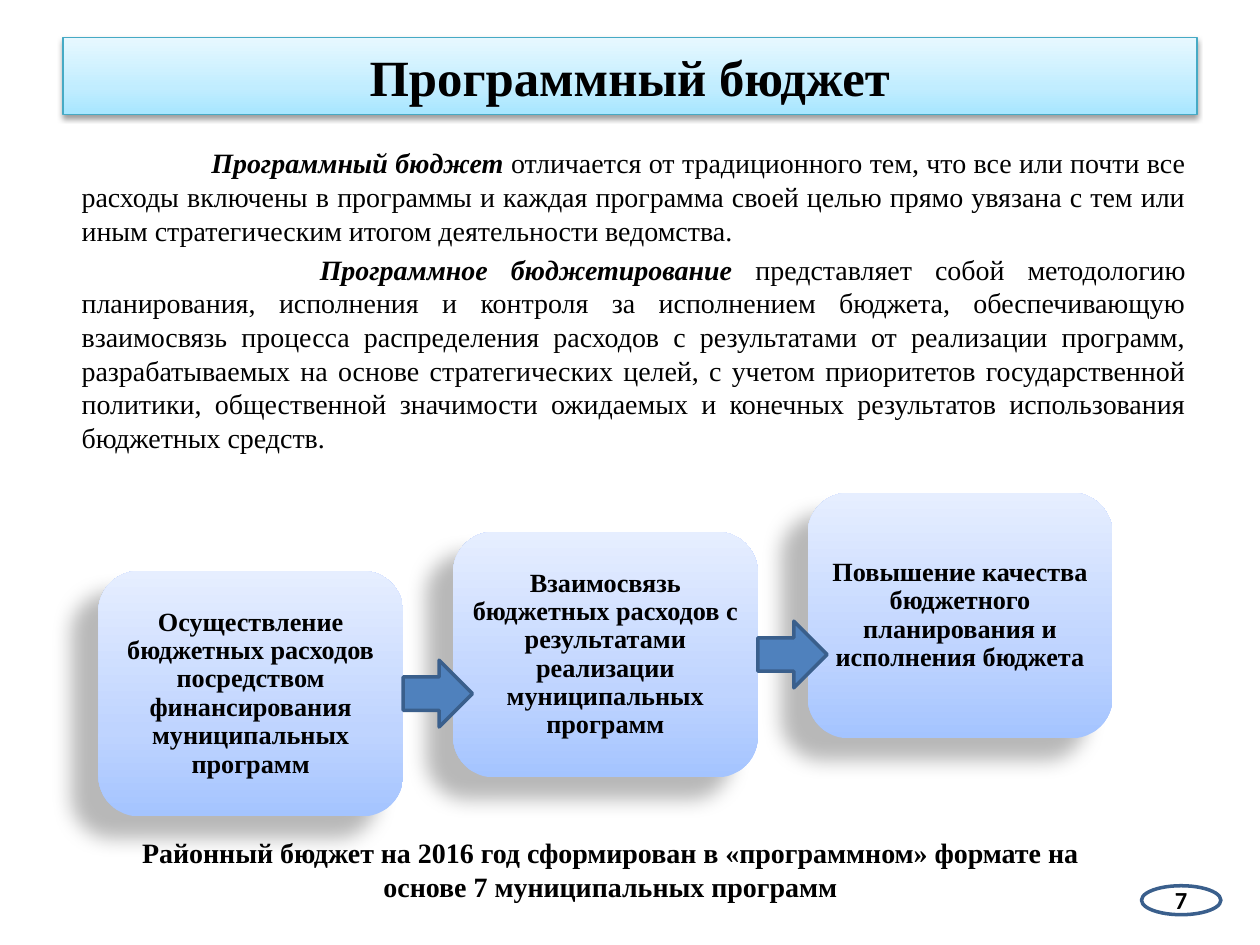
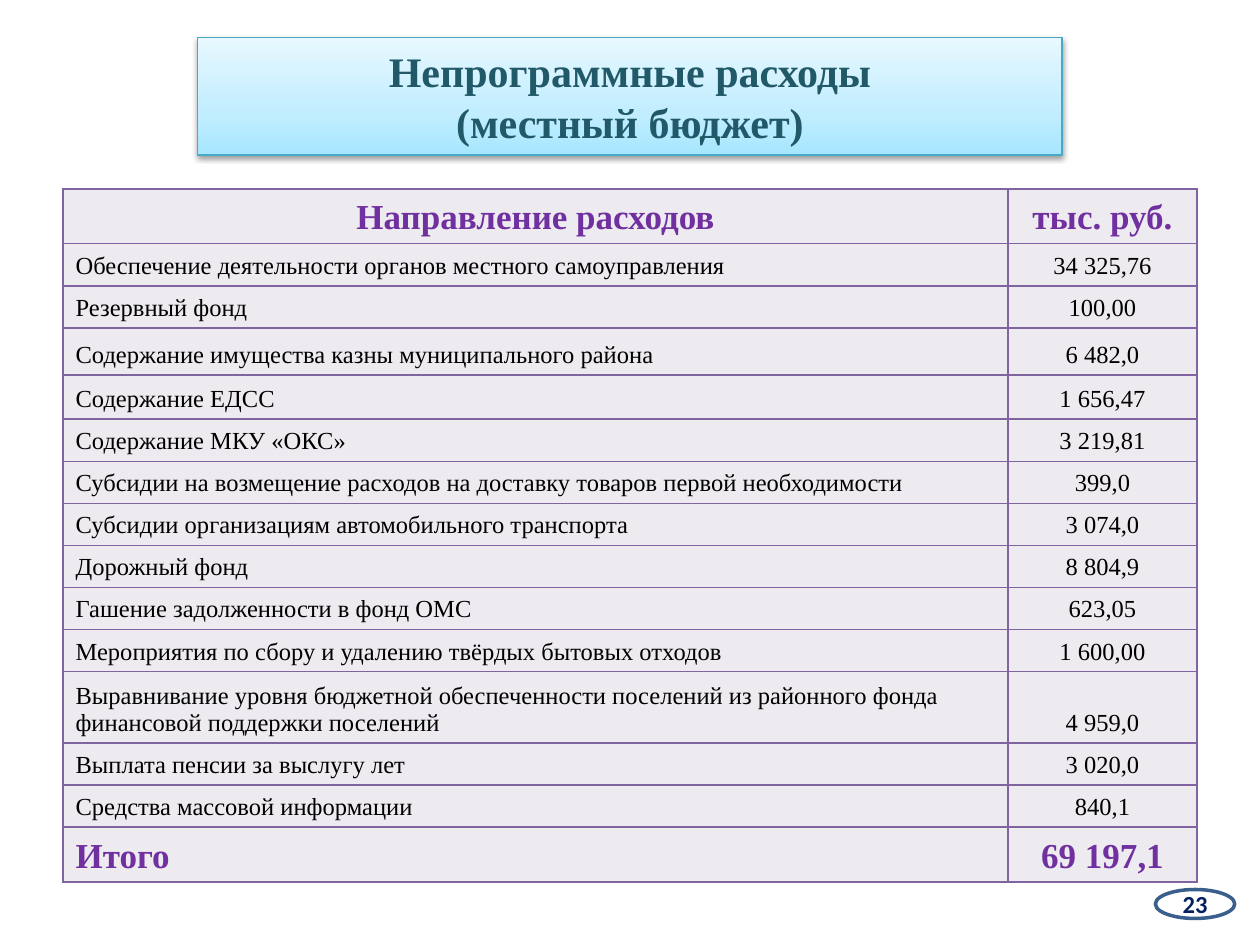
"""Builds two budget slides: the programme budget and the non-programme expenses."""
from typing import NamedTuple, Optional

from lxml.etree import SubElement
from pptx import Presentation
from pptx.dml.color import RGBColor
from pptx.enum.shapes import MSO_SHAPE
from pptx.enum.text import MSO_ANCHOR, PP_ALIGN
from pptx.oxml.ns import qn
from pptx.util import Inches, Pt

COLUMNS, ROWS = 100, 75
SLIDE_WIDTH, SLIDE_HEIGHT = Inches(10), Inches(7.5)
SERIF, SANS = "Times New Roman", "Calibri"
BLACK, WHITE, TEAL, NAVY, PURPLE = "000000", "FFFFFF", "215968", "002060", "7030A0"
EDGE_BLUE, ARROW_BLUE, TITLE_EDGE = "3A5F8C", "4F81BD", "46AAC5"
CELL_FILL, CELL_EDGE = "EDEAF0", "8064A2"
TITLE_GRADIENT = {0: "A7E6FF", 35: "C1EDFF", 100: "E7F8FF"}
CARD_GRADIENT = {0: "A4C4FF", 35: "BFD4FF", 100: "E6EEFF"}


class Area(NamedTuple):
    """A rectangle in grid columns and rows."""
    left: float
    top: float
    width: float
    height: float


class TextStyle(NamedTuple):
    """Font and alignment of a paragraph."""
    size: float
    color: str = BLACK
    bold: bool = True
    font: str = SERIF
    align: PP_ALIGN = PP_ALIGN.CENTER


class Shadow(NamedTuple):
    """An outer shadow: opacity in percent, lengths in points, angle in degrees."""
    opacity: int
    blur: float
    distance: float
    angle: int


class Definition(NamedTuple):
    """A term, its explanation and the first-line indent in columns."""
    term: str
    explanation: str
    indent: float


class Expense(NamedTuple):
    """A table row with its height in grid rows."""
    purpose: str
    amount: str
    height: float


TITLE_SHADOW = Shadow(38, 3.1, 1.6, 90)
CARD_SHADOW = Shadow(28, 11.8, 19.7, 141)
CARD_STYLE = TextStyle(15)
CAPTION_STYLE = TextStyle(16)
BODY_STYLE = TextStyle(16, bold=False, align=PP_ALIGN.JUSTIFY)
BODY_MARGIN = 3.8
FIRST_CARD = Area(7.8, 45.3, 24.2, 19.5)
CARD_STEP, CARD_RISE = 28.15, 3.1
FIRST_ARROW = Area(32, 52.4, 5.5, 5.3)

DEFINITIONS = [
    Definition("Программный бюджет ", "отличается от традиционного тем, что все или почти все расходы "
               "включены в программы и каждая программа своей целью прямо увязана с тем или иным "
               "стратегическим итогом деятельности ведомства.", 10.3),
    Definition("Программное бюджетирование ", "представляет собой методологию планирования, исполнения "
               "и контроля за исполнением бюджета, обеспечивающую взаимосвязь процесса распределения "
               "расходов с результатами от реализации программ, разрабатываемых на основе стратегических "
               "целей, с учетом приоритетов государственной политики, общественной значимости ожидаемых "
               "и конечных результатов использования бюджетных средств.", 18.9),
]
STAGES = [
    "Осуществление бюджетных расходов посредством финансирования муниципальных программ",
    "Взаимосвязь бюджетных расходов с результатами реализации муниципальных программ",
    "Повышение качества бюджетного планирования и исполнения бюджета",
]
CAPTION = "Районный бюджет на 2016 год сформирован в «программном» формате на основе 7 муниципальных программ"
EXPENSES = [
    Expense("Направление расходов", "тыс. руб.", 4.1),
    Expense("Обеспечение деятельности органов местного самоуправления", "34 325,76", 3.35),
    Expense("Резервный фонд", "100,00", 3.3),
    Expense("Содержание имущества казны муниципального района", "6 482,0", 3.75),
    Expense("Содержание ЕДСС", "1 656,47", 3.5),
    Expense("Содержание МКУ «ОКС»", "3 219,81", 3.15),
    Expense("Субсидии на возмещение расходов на доставку товаров первой необходимости", "399,0", 3.15),
    Expense("Субсидии организациям автомобильного транспорта", "3 074,0", 3.15),
    Expense("Дорожный фонд", "8 804,9", 3.3),
    Expense("Гашение задолженности в фонд ОМС", "623,05", 3.3),
    Expense("Мероприятия по сбору и удалению твёрдых бытовых отходов", "1 600,00", 3.3),
    Expense("Выравнивание уровня бюджетной обеспеченности поселений из районного фонда "
            "финансовой поддержки поселений", "4 959,0", 5.3),
    Expense("Выплата пенсии за выслугу лет", "3 020,0", 3.3),
    Expense("Средства массовой информации", "840,1", 3.3),
    Expense("Итого", "69 197,1", 4.1),
]


def across(columns: float) -> int:
    """Convert grid columns to a length."""
    return int(SLIDE_WIDTH * columns / COLUMNS)


def down(rows: float) -> int:
    """Convert grid rows to a length."""
    return int(SLIDE_HEIGHT * rows / ROWS)


def place(area: Area) -> tuple[int, int, int, int]:
    """Convert an area to left, top, width and height."""
    return across(area.left), down(area.top), across(area.width), down(area.height)


def rgb(color: str) -> RGBColor:
    """Convert a hex string to a colour."""
    return RGBColor.from_string(color)


def style_paragraph(paragraph, style: TextStyle) -> None:
    """Apply a text style to a paragraph."""
    paragraph.alignment = style.align
    font = paragraph.font
    font.name, font.size, font.bold = style.font, Pt(style.size), style.bold
    font.color.rgb = rgb(style.color)


def write(frame, text: str, style: TextStyle) -> None:
    """Put one styled paragraph into a text frame."""
    frame.word_wrap = True
    frame.vertical_anchor = MSO_ANCHOR.MIDDLE
    frame.paragraphs[0].text = text
    style_paragraph(frame.paragraphs[0], style)


def add_plain(page, kind: MSO_SHAPE, area: Area, fill: Optional[str] = None,
              edge: Optional[str] = None, edge_width: float = 2):
    """Add a preset shape without shadow."""
    shape = page.shapes.add_shape(kind, *place(area))
    shape.shadow.inherit = False
    if fill:
        shape.fill.solid()
        shape.fill.fore_color.rgb = rgb(fill)
    if edge:
        shape.line.color.rgb = rgb(edge)
        shape.line.width = Pt(edge_width)
    else:
        shape.line.fill.background()
    return shape


def add_glossy(page, kind: MSO_SHAPE, area: Area, gradient: dict[int, str],
               shadow: Shadow, edge: Optional[str] = None):
    """Add a shape with an upward gradient and an outer shadow."""
    shape = add_plain(page, kind, area, edge=edge, edge_width=0.75)
    shape.fill.gradient()
    shape.fill.gradient_angle = 90
    properties = shape.element.spPr
    stops = properties.find(".//" + qn("a:gsLst"))
    stops.clear()
    for position, color in gradient.items():
        stop = SubElement(stops, qn("a:gs"), pos=str(position * 1000))
        SubElement(stop, qn("a:srgbClr"), val=color)
    outer = SubElement(properties.find(qn("a:effectLst")), qn("a:outerShdw"),
                       blurRad=str(Pt(shadow.blur)), dist=str(Pt(shadow.distance)),
                       dir=str(shadow.angle * 60000), algn="ctr", rotWithShape="0")
    tint = SubElement(outer, qn("a:srgbClr"), val=BLACK)
    SubElement(tint, qn("a:alpha"), val=str(shadow.opacity * 1000))
    return shape


def add_title(page, text: str, area: Area, style: TextStyle) -> None:
    """Add the title band."""
    band = add_glossy(page, MSO_SHAPE.RECTANGLE, area, TITLE_GRADIENT, TITLE_SHADOW, TITLE_EDGE)
    write(band.text_frame, text, style)


def add_page_number(page, number: str, left: float, top: float, color: str) -> None:
    """Add the oval page number."""
    oval = add_plain(page, MSO_SHAPE.OVAL, Area(left, top, 6.3, 2.3), WHITE, EDGE_BLUE)
    write(oval.text_frame, number, TextStyle(14, color, font=SANS))
    oval.text_frame.word_wrap = False


def add_definitions(page) -> None:
    """Add the justified definitions."""
    frame = page.shapes.add_textbox(*place(Area(1.7, 11.1, 93.4, 26))).text_frame
    frame.word_wrap = True
    for index, definition in enumerate(DEFINITIONS):
        paragraph = frame.paragraphs[0] if index == 0 else frame.add_paragraph()
        style_paragraph(paragraph, BODY_STYLE)
        paragraph.space_before = Pt(3.2)
        layout = paragraph._p.get_or_add_pPr()
        layout.set("marL", str(across(BODY_MARGIN)))
        layout.set("indent", str(across(definition.indent)))
        term = paragraph.add_run()
        term.text = definition.term
        term.font.bold = term.font.italic = True
        paragraph.add_run().text = definition.explanation


def add_stages(page) -> None:
    """Add the rising cards and the arrows between them."""
    for index, stage in enumerate(STAGES):
        area = FIRST_CARD._replace(left=FIRST_CARD.left + index * CARD_STEP,
                                   top=FIRST_CARD.top - index * CARD_RISE)
        card = add_glossy(page, MSO_SHAPE.ROUNDED_RECTANGLE, area, CARD_GRADIENT, CARD_SHADOW)
        frame = card.text_frame
        frame.margin_left = frame.margin_right = Inches(0.06)
        frame.margin_top = frame.margin_bottom = Inches(0.03)
        write(frame, stage, CARD_STYLE)
        frame.paragraphs[0].line_spacing = 0.9
    for index in range(len(STAGES) - 1):
        area = FIRST_ARROW._replace(left=FIRST_ARROW.left + index * CARD_STEP,
                                    top=FIRST_ARROW.top - index * CARD_RISE)
        add_plain(page, MSO_SHAPE.RIGHT_ARROW, area, ARROW_BLUE, EDGE_BLUE)


def outline_cell(cell) -> None:
    """Draw the four borders of a cell ahead of its fill."""
    properties = cell._tc.get_or_add_tcPr()
    for index, side in enumerate(("a:lnL", "a:lnR", "a:lnT", "a:lnB")):
        line = SubElement(properties, qn(side), w=str(Pt(1)))
        SubElement(SubElement(line, qn("a:solidFill")), qn("a:srgbClr"), val=CELL_EDGE)
        properties.insert(index, line)


def add_expenses(page) -> None:
    """Add the expense table."""
    height = sum(expense.height for expense in EXPENSES)
    table = page.shapes.add_table(len(EXPENSES), 2, *place(Area(5, 15, 90, height))).table
    for column, width in zip(table.columns, (75, 15)):
        column.width = across(width)
    last = len(EXPENSES) - 1
    for row, expense in enumerate(EXPENSES):
        table.rows[row].height = down(expense.height)
        style = TextStyle(20, PURPLE) if row in (0, last) else TextStyle(14, bold=False)
        for column, text in enumerate((expense.purpose, expense.amount)):
            cell = table.cell(row, column)
            cell.fill.solid()
            cell.fill.fore_color.rgb = rgb(CELL_FILL)
            outline_cell(cell)
            cell.vertical_anchor = MSO_ANCHOR.BOTTOM
            paragraph = cell.text_frame.paragraphs[0]
            paragraph.text = text
            centred = row == 0 or column == 1
            style_paragraph(paragraph, style if centred else style._replace(align=PP_ALIGN.LEFT))


def build_programme_slide(page) -> None:
    """Draw the programme budget slide."""
    add_page_number(page, "7", 90.6, 70.3, BLACK)
    add_title(page, "Программный бюджет", Area(5, 3, 90, 6.1), TextStyle(29))
    add_definitions(page)
    add_stages(page)
    caption = page.shapes.add_textbox(*place(Area(7.8, 65.8, 81.3, 6.4)))
    write(caption.text_frame, CAPTION, CAPTION_STYLE)


def build_expenses_slide(page) -> None:
    """Draw the non-programme expenses slide."""
    add_title(page, "Непрограммные расходы\v(местный бюджет)",
              Area(15.7, 3, 68.6, 9.3), TextStyle(24, TEAL))
    add_expenses(page)
    add_page_number(page, "23", 91.7, 70.6, NAVY)


def main() -> None:
    """Build and save the deck."""
    deck = Presentation()
    deck.slide_width, deck.slide_height = SLIDE_WIDTH, SLIDE_HEIGHT
    for build in (build_programme_slide, build_expenses_slide):
        build(deck.slides.add_slide(deck.slide_layouts[6]))
    deck.save("out.pptx")


if __name__ == "__main__":
    main()
